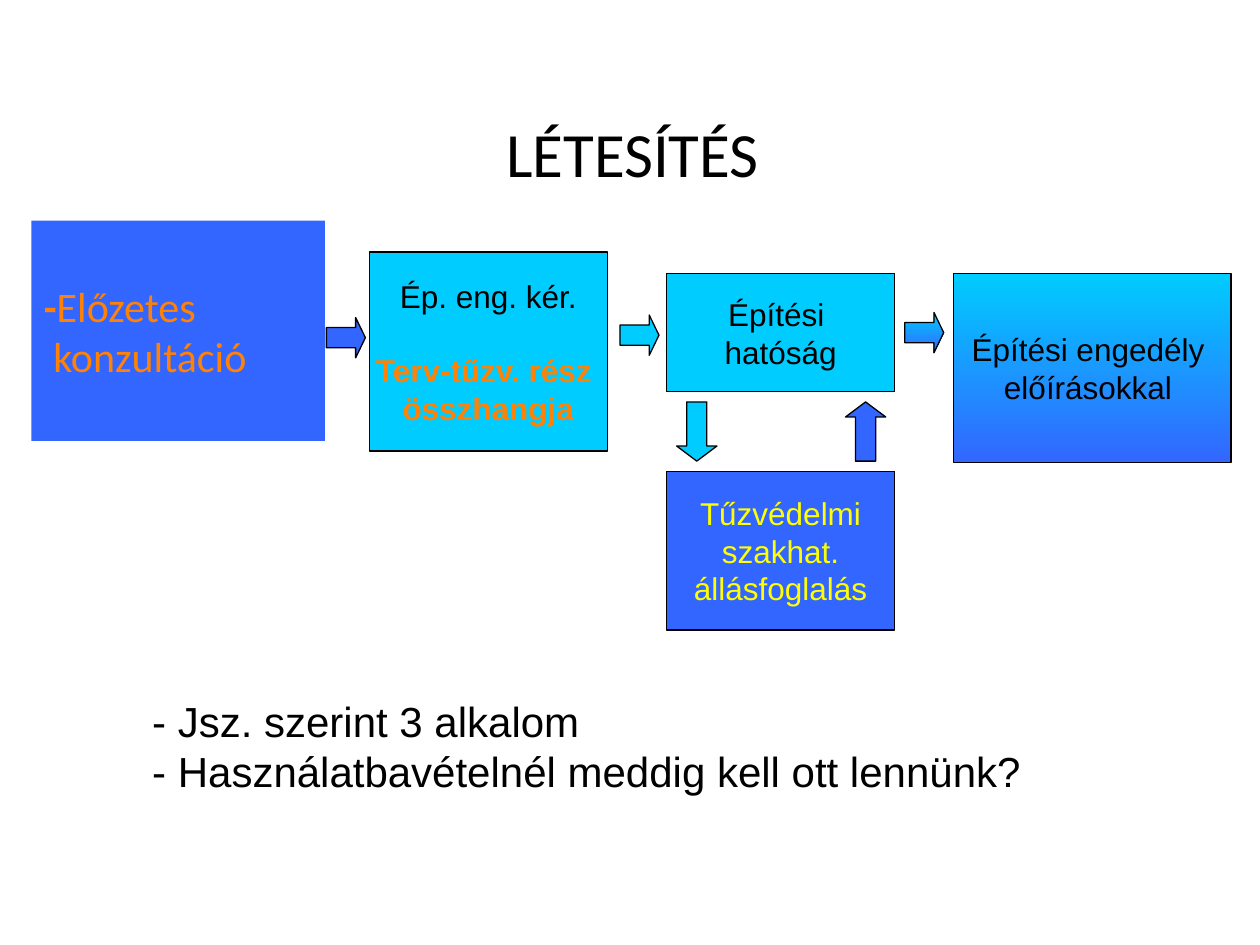
from dataclasses import dataclass

from pptx import Presentation
from pptx.dml.color import RGBColor
from pptx.enum.shapes import MSO_SHAPE as Preset
from pptx.enum.text import MSO_ANCHOR as Anchor, MSO_AUTO_SIZE as AutoSize, PP_ALIGN as Align
from pptx.shapes.autoshape import Shape
from pptx.slide import Slide
from pptx.text.text import TextFrame
from pptx.util import Inches, Pt


@dataclass(frozen=True)
class Theme:
    black: str = "000000"
    cyan: str = "00CCFF"
    blue: str = "3366FF"
    orange: str = "FF8106"
    yellow: str = "FFFF00"
    heading_font: str = "Calibri"
    body_font: str = "Arial"
    title_size: int = 36
    large_size: int = 24
    box_size: int = 18
    outline: float = 0.75


THEME = Theme()
CYAN_FILL = (THEME.cyan,)
BLUE_FILL = (THEME.blue,)
GRADIENT_FILL = (THEME.cyan, THEME.blue)


@dataclass(frozen=True)
class Span:
    text: str
    color: str = THEME.black
    bold: bool = False


@dataclass(frozen=True)
class Line:
    spans: tuple[Span, ...]
    space_before: float = 0


@dataclass(frozen=True)
class TextStyle:
    font: str = THEME.body_font
    size: int = THEME.box_size
    align: Align = Align.CENTER
    wrap: bool = False


@dataclass(frozen=True)
class Box:
    left: float
    top: float
    width: float
    height: float
    fill: tuple[str, ...]
    lines: tuple[Line, ...]
    style: TextStyle = TextStyle()
    outlined: bool = True


@dataclass(frozen=True)
class Arrow:
    preset: Preset
    left: float
    top: float
    fill: tuple[str, ...]


def plain_lines(*texts: str, color: str = THEME.black) -> tuple[Line, ...]:
    return tuple(Line((Span(text, color),)) for text in texts)


CONSULTATION = (
    Line((Span("-", THEME.orange, True), Span("Előzetes", THEME.orange))),
    Line((Span(" konzultáció", THEME.orange),)),
)
APPLICATION = (
    Line((Span("Ép. eng. kér."),)),
    Line((Span("Terv-tűzv. rész ", THEME.orange, True),), space_before=20.7),
    Line((Span("összhangja", THEME.orange, True),)),
)
BOXES = (
    Box(2.93, 2, 1.89, 1.58, CYAN_FILL, APPLICATION),
    Box(5.29, 2.17, 1.81, 0.94, CYAN_FILL, plain_lines("Építési ", "hatóság")),
    Box(5.29, 3.74, 1.81, 1.26, BLUE_FILL,
        plain_lines("Tűzvédelmi", "szakhat.", "állásfoglalás", color=THEME.yellow)),
    Box(7.57, 2.17, 2.2, 1.5, GRADIENT_FILL,
        plain_lines("Építési engedély ", "előírásokkal ")),
    Box(0.25, 1.75, 2.33, 1.75, BLUE_FILL, CONSULTATION,
        TextStyle(THEME.heading_font, THEME.large_size, Align.LEFT, True), False),
)
ARROWS = (
    Arrow(Preset.RIGHT_ARROW, 2.59, 2.52, BLUE_FILL),
    Arrow(Preset.RIGHT_ARROW, 4.92, 2.5, CYAN_FILL),
    Arrow(Preset.RIGHT_ARROW, 7.18, 2.48, GRADIENT_FILL),
    Arrow(Preset.DOWN_ARROW, 5.37, 3.19, CYAN_FILL),
    Arrow(Preset.UP_ARROW, 6.71, 3.19, BLUE_FILL),
)
NOTES = plain_lines("- Jsz. szerint 3 alkalom",
                    "- Használatbavételnél meddig kell ott lennünk?")


def write_lines(text_frame: TextFrame, lines: tuple[Line, ...], style: TextStyle) -> None:
    text_frame.word_wrap = style.wrap
    text_frame.text = "\n".join("" for _ in lines)
    for paragraph, line in zip(text_frame.paragraphs, lines):
        paragraph.alignment = style.align
        paragraph.space_before = Pt(line.space_before)
        for span in line.spans:
            run = paragraph.add_run()
            run.text = span.text
            run.font.name = style.font
            run.font.size = Pt(style.size)
            run.font.bold = span.bold
            run.font.color.rgb = RGBColor.from_string(span.color)


def add_filled_shape(slide: Slide, preset: Preset, left: float, top: float, width: float,
                     height: float, colors: tuple[str, ...], outlined: bool = True) -> Shape:
    shape = slide.shapes.add_shape(preset, Inches(left), Inches(top),
                                   Inches(width), Inches(height))
    shape.shadow.inherit = False
    if len(colors) == 1:
        shape.fill.solid()
        shape.fill.fore_color.rgb = RGBColor.from_string(colors[0])
    else:
        shape.fill.gradient()
        shape.fill.gradient_angle = 270
        for stop, color in zip(shape.fill.gradient_stops, colors):
            stop.color.rgb = RGBColor.from_string(color)
    if outlined:
        shape.line.color.rgb = RGBColor.from_string(THEME.black)
        shape.line.width = Pt(THEME.outline)
    else:
        shape.line.fill.background()
    return shape


def add_box(slide: Slide, box: Box) -> None:
    shape = add_filled_shape(slide, Preset.RECTANGLE, box.left, box.top, box.width,
                             box.height, box.fill, box.outlined)
    shape.text_frame.vertical_anchor = Anchor.MIDDLE
    write_lines(shape.text_frame, box.lines, box.style)


def add_arrow(slide: Slide, arrow: Arrow) -> None:
    horizontal = arrow.preset == Preset.RIGHT_ARROW
    width, height, head = (0.31, 0.32, 0.25) if horizontal else (0.32, 0.47, 0.375)
    shape = add_filled_shape(slide, arrow.preset, arrow.left, arrow.top,
                             width, height, arrow.fill)
    shape.adjustments[0] = 0.5
    shape.adjustments[1] = head


def add_title(slide: Slide) -> None:
    title = slide.shapes.title
    title.left, title.top = Inches(0.52), Inches(0.31)
    title.width, title.height = Inches(9), Inches(1.25)
    title.text_frame.vertical_anchor = Anchor.BOTTOM
    write_lines(title.text_frame, plain_lines("LÉTESÍTÉS"),
                TextStyle(THEME.heading_font, THEME.title_size, wrap=True))


def add_notes(slide: Slide) -> None:
    text_box = slide.shapes.add_textbox(Inches(1.11), Inches(5.47), Inches(7.17), Inches(0.91))
    write_lines(text_box.text_frame, NOTES, TextStyle(size=THEME.large_size, align=Align.LEFT))
    text_box.text_frame.auto_size = AutoSize.SHAPE_TO_FIT_TEXT


def main() -> None:
    presentation = Presentation()
    presentation.slide_width, presentation.slide_height = Inches(10), Inches(7.5)
    slide = presentation.slides.add_slide(presentation.slide_layouts.get_by_name("Title Only"))
    add_title(slide)
    for box in BOXES:
        add_box(slide, box)
    for arrow in ARROWS:
        add_arrow(slide, arrow)
    add_notes(slide)
    presentation.save("out.pptx")


if __name__ == "__main__":
    main()
